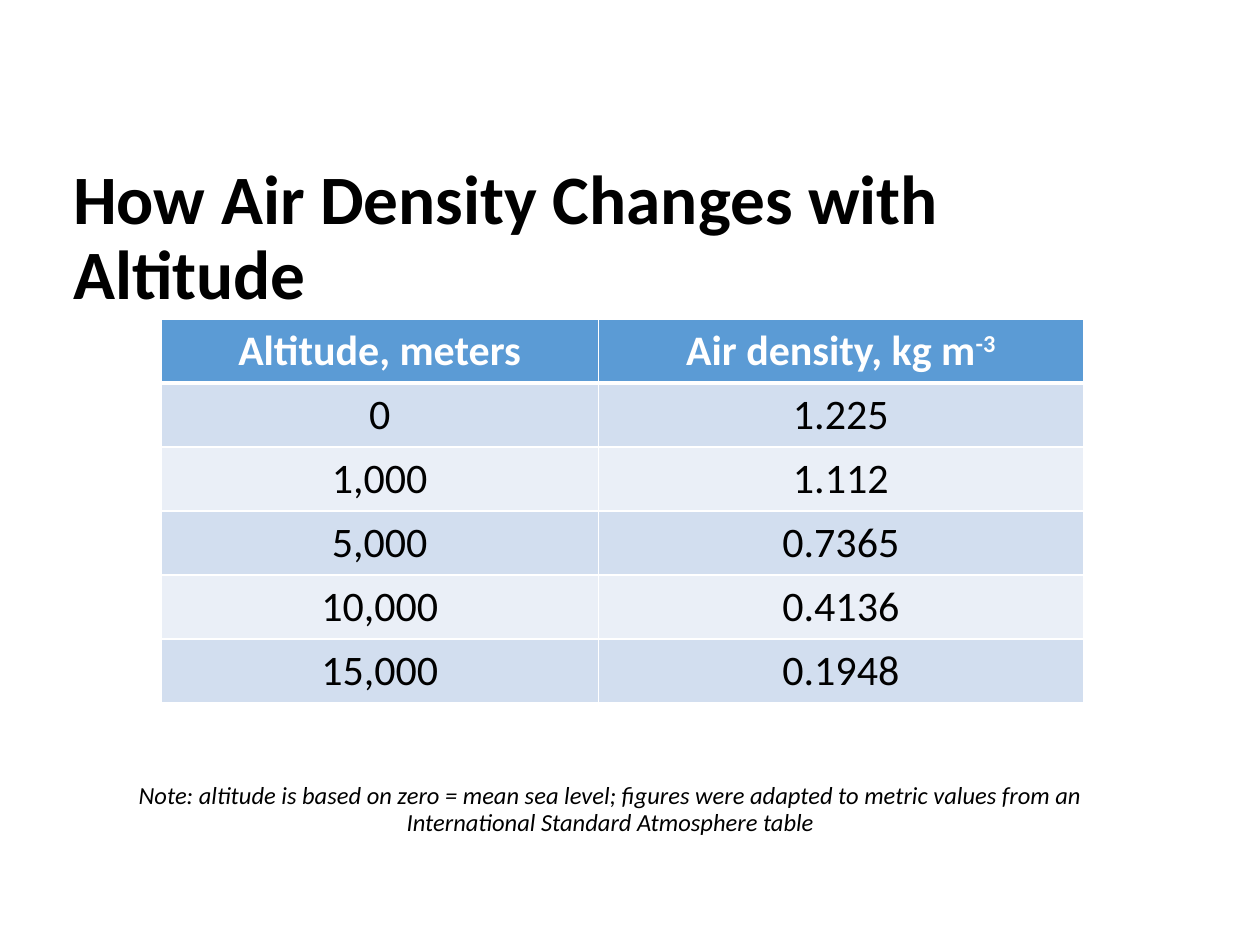
from lxml.etree import SubElement
from pptx import Presentation
from pptx.dml.color import RGBColor
from pptx.enum.text import MSO_ANCHOR, MSO_AUTO_SIZE, PP_ALIGN
from pptx.oxml.ns import qn
from pptx.util import Cm, Pt

FONT = "Calibri"
COLORS = {
    "text": "000000",
    "header_text": "FFFFFF",
    "header": "5B9BD5",
    "odd_row": "D2DEEF",
    "even_row": "EAEFF7",
    "border": "FFFFFF",
}
TITLE = "How Air Density Changes with Altitude"
NOTE = ("Note: altitude is based on zero = mean sea level; figures were adapted "
        "to metric values from an International Standard Atmosphere table")
HEADERS = [["Altitude, meters"], ["Air density, kg m", "-3"]]
DENSITIES = [
    ("0", "1.225"),
    ("1,000", "1.112"),
    ("5,000", "0.7365"),
    ("10,000", "0.4136"),
    ("15,000", "0.1948"),
]
COLUMN_WIDTHS = [Cm(8.81), Cm(9.78)]
ROW_HEIGHT = Cm(1.29)


def add_run(paragraph, text, size, color="text", bold=False, italic=False):
    run = paragraph.add_run()
    run.text = text
    font = run.font
    font.name, font.size = FONT, Pt(size)
    font.bold, font.italic = bold, italic
    font.color.rgb = RGBColor.from_string(COLORS[color])
    return run


def place(shape, left, top, width, height):
    shape.left, shape.top = Cm(left), Cm(top)
    shape.width, shape.height = Cm(width), Cm(height)


def format_title(title):
    place(title, 1.22, 3.78, 22.68, 2.11)
    frame = title.text_frame
    frame.word_wrap = True
    frame.auto_size = MSO_AUTO_SIZE.NONE
    frame.vertical_anchor = MSO_ANCHOR.MIDDLE
    paragraph = frame.paragraphs[0]
    paragraph.alignment = PP_ALIGN.LEFT
    paragraph.line_spacing = 0.9
    add_run(paragraph, TITLE, 39.6, bold=True)


def add_border(cell, side, width):
    properties = cell._tc.get_or_add_tcPr()
    line = SubElement(properties, qn(f"a:ln{side}"), w=str(Pt(width)))
    fill = SubElement(line, qn("a:solidFill"))
    SubElement(fill, qn("a:srgbClr"), val=COLORS["border"])


def fill_cell(cell, texts, fill, color="text", bold=False, top=1, bottom=1):
    """Write the first text normally and any further one as superscript."""
    for side, width in zip("LRTB", (1, 1, top, bottom)):
        add_border(cell, side, width)
    cell.fill.solid()
    cell.fill.fore_color.rgb = RGBColor.from_string(COLORS[fill])
    paragraph = cell.text_frame.paragraphs[0]
    paragraph.alignment = PP_ALIGN.CENTER
    for index, text in enumerate(texts):
        run = add_run(paragraph, text, 24, color, bold)
        if index:
            run.font._element.set("baseline", "30000")


def add_density_table(slide):
    row_count = len(DENSITIES) + 1
    table = slide.shapes.add_table(
        row_count, len(HEADERS), Cm(3.25), Cm(6.43),
        sum(COLUMN_WIDTHS), ROW_HEIGHT * row_count).table
    for column, width in zip(table.columns, COLUMN_WIDTHS):
        column.width = width
    for row in table.rows:
        row.height = ROW_HEIGHT
    for column, texts in enumerate(HEADERS):
        fill_cell(table.cell(0, column), texts, "header", "header_text",
                  bold=True, bottom=3)
    for row, values in enumerate(DENSITIES, start=1):
        fill = "odd_row" if row % 2 else "even_row"
        for column, value in enumerate(values):
            fill_cell(table.cell(row, column), [value], fill,
                      top=3 if row == 1 else 1)


def add_note(slide):
    box = slide.shapes.add_textbox(Cm(2.31), Cm(15.67), Cm(19.99), Cm(1.85))
    box.text_frame.word_wrap = True
    paragraph = box.text_frame.paragraphs[0]
    paragraph.alignment = PP_ALIGN.CENTER
    paragraph.line_spacing = 0.9
    add_run(paragraph, NOTE, 14, italic=True)


def main():
    presentation = Presentation()
    presentation.slide_width, presentation.slide_height = Cm(25.4), Cm(19.05)
    slide = presentation.slides.add_slide(presentation.slide_layouts[5])
    format_title(slide.shapes.title)
    add_density_table(slide)
    add_note(slide)
    presentation.save("out.pptx")


if __name__ == "__main__":
    main()
